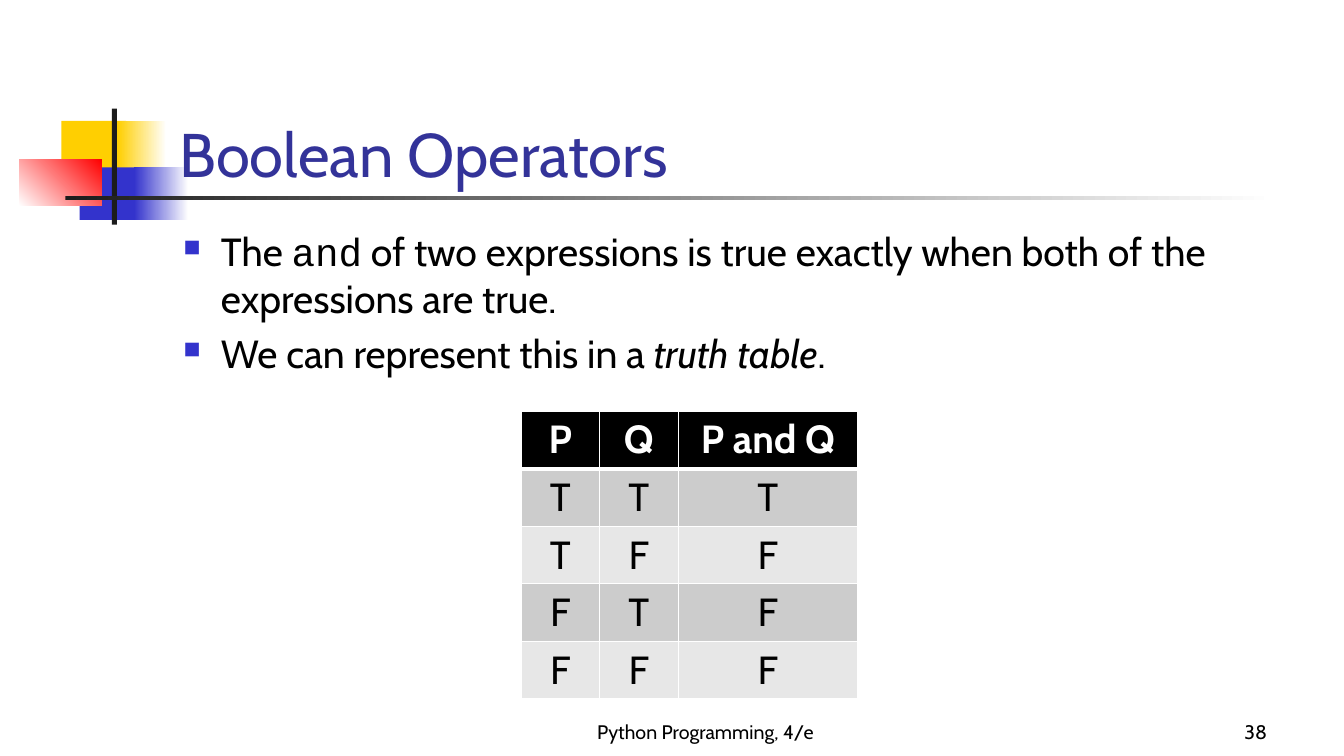
import lxml.etree
import pptx
import pptx.dml.color
import pptx.enum.shapes
import pptx.enum.text
import pptx.oxml.ns
import pptx.util

Cm = pptx.util.Cm
Pt = pptx.util.Pt
RGBColor = pptx.dml.color.RGBColor
ALIGN = pptx.enum.text.PP_ALIGN
ANCHOR = pptx.enum.text.MSO_ANCHOR
qn = pptx.oxml.ns.qn

BLACK = RGBColor(0x00, 0x00, 0x00)
WHITE = RGBColor(0xFF, 0xFF, 0xFF)
YELLOW = RGBColor(0xFF, 0xCF, 0x01)
BLUE = RGBColor(0x33, 0x33, 0xCC)
RED = RGBColor(0xFF, 0x00, 0x00)
CHARCOAL = RGBColor(0x1C, 0x1C, 0x1C)
TITLE_BLUE = RGBColor(0x33, 0x33, 0x99)
DARK_BAND = RGBColor(0xCC, 0xCC, 0xCC)
LIGHT_BAND = RGBColor(0xE7, 0xE7, 0xE7)


def write(paragraph, text, size=28, font="Cabin", color=BLACK, bold=False,
          italic=False, align=ALIGN.LEFT):
    paragraph.alignment = align
    run = paragraph.add_run()
    run.text = text
    run.font.size = Pt(size)
    run.font.name = font
    run.font.color.rgb = color
    run.font.bold = bold
    run.font.italic = italic


def add_frame(left, top, width, height, anchor):
    """Add a wrapping text box, measured in cm, and return its text frame."""
    frame = slide.shapes.add_textbox(Cm(left), Cm(top), Cm(width), Cm(height)).text_frame
    frame.word_wrap = True
    frame.vertical_anchor = anchor
    return frame


presentation = pptx.Presentation()
presentation.slide_width = Cm(33.87)
presentation.slide_height = Cm(19.05)
slide = presentation.slides.add_slide(presentation.slide_layouts[6])

# Corner ornament: left, top, width, height, start colour, end colour, angle
ornament = [
    (1.55, 3.05, 1.63, 1.32, YELLOW, None, 0),
    (2.97, 3.05, 1.22, 1.32, YELLOW, WHITE, 0),
    (2.01, 4.22, 1.57, 1.32, BLUE, None, 0),
    (3.38, 4.22, 1.37, 1.32, BLUE, WHITE, 0),
    (0.48, 4.01, 2.08, 1.17, WHITE, RED, 45),
    (2.82, 2.74, 0.13, 2.92, CHARCOAL, None, 0),
    (1.65, 4.95, 30.48, 0.08, CHARCOAL, WHITE, 0),
]
for left, top, width, height, start, end, angle in ornament:
    block = slide.shapes.add_shape(pptx.enum.shapes.MSO_SHAPE.RECTANGLE,
                                   Cm(left), Cm(top), Cm(width), Cm(height))
    block.shadow.inherit = False
    block.line.fill.background()
    if end is None:
        block.fill.solid()
        block.fill.fore_color.rgb = start
    else:
        block.fill.gradient()
        block.fill.gradient_angle = angle
        for stop, color in zip(block.fill.gradient_stops, (start, end)):
            stop.color.rgb = color

# Footer and title
footer = add_frame(12.42, 17.58, 10.72, 1.27, ANCHOR.BOTTOM)
write(footer.paragraphs[0], "Python Programming, 4/e", size=14, align=ALIGN.CENTER)
page_number = add_frame(25.12, 17.58, 7.06, 1.27, ANCHOR.BOTTOM)
write(page_number.paragraphs[0], "38", size=14, align=ALIGN.RIGHT)
title = add_frame(4.27, 1.73, 28.85, 3.18, ANCHOR.BOTTOM)
write(title.paragraphs[0], "Boolean Operators", size=44, color=TITLE_BLUE)

# Bulleted statements
statements = [
    [("The ", {}), ("and", {"font": "Courier New"}),
     (" of two expressions is true exactly when both of the expressions are true.", {})],
    [("We can represent this in a ", {}), ("truth table", {"italic": True}), (".", {})],
]
body = add_frame(4.37, 5.61, 28.78, 11.43, ANCHOR.TOP)
for index, pieces in enumerate(statements):
    statement = body.add_paragraph() if index else body.paragraphs[0]
    statement.space_before = Pt(5.6)
    for text, style in pieces:
        write(statement, text, **style)
    properties = statement._p.get_or_add_pPr()
    properties.set("marL", str(Cm(0.95)))
    properties.set("indent", str(-Cm(0.95)))
    bullet_color = lxml.etree.SubElement(properties, qn("a:buClr"))
    lxml.etree.SubElement(bullet_color, qn("a:srgbClr"), val=str(BLUE))
    lxml.etree.SubElement(properties, qn("a:buSzPct"), val="60000")
    lxml.etree.SubElement(properties, qn("a:buChar"), char="■")

# Truth table
truth_rows = [("P", "Q", "P and Q")]
for p in (True, False):
    for q in (True, False):
        truth_rows.append(tuple("T" if value else "F" for value in (p, q, p and q)))
column_widths = [1.98, 1.98, 4.52]
row_height = 1.45
truth_table = slide.shapes.add_table(
    len(truth_rows), len(column_widths), Cm(13.13), Cm(10.36),
    Cm(sum(column_widths)), Cm(row_height * len(truth_rows))).table
for column, width in zip(truth_table.columns, column_widths):
    column.width = Cm(width)

for row, values in enumerate(truth_rows):
    truth_table.rows[row].height = Cm(row_height)
    header = row == 0
    band = BLACK if header else DARK_BAND if row % 2 else LIGHT_BAND
    borders = {"a:lnL": 1, "a:lnR": 1, "a:lnT": 3 if row == 1 else 1, "a:lnB": 3 if header else 1}
    for column, value in enumerate(values):
        cell = truth_table.cell(row, column)
        write(cell.text_frame.paragraphs[0], value, bold=header,
              color=WHITE if header else BLACK, align=ALIGN.CENTER)
        cell_properties = cell._tc.get_or_add_tcPr()
        for side, weight in borders.items():
            border = lxml.etree.SubElement(cell_properties, qn(side), w=str(Pt(weight)))
            border_fill = lxml.etree.SubElement(border, qn("a:solidFill"))
            lxml.etree.SubElement(border_fill, qn("a:srgbClr"), val=str(WHITE))
        cell.fill.solid()
        cell.fill.fore_color.rgb = band

presentation.save("out.pptx")
